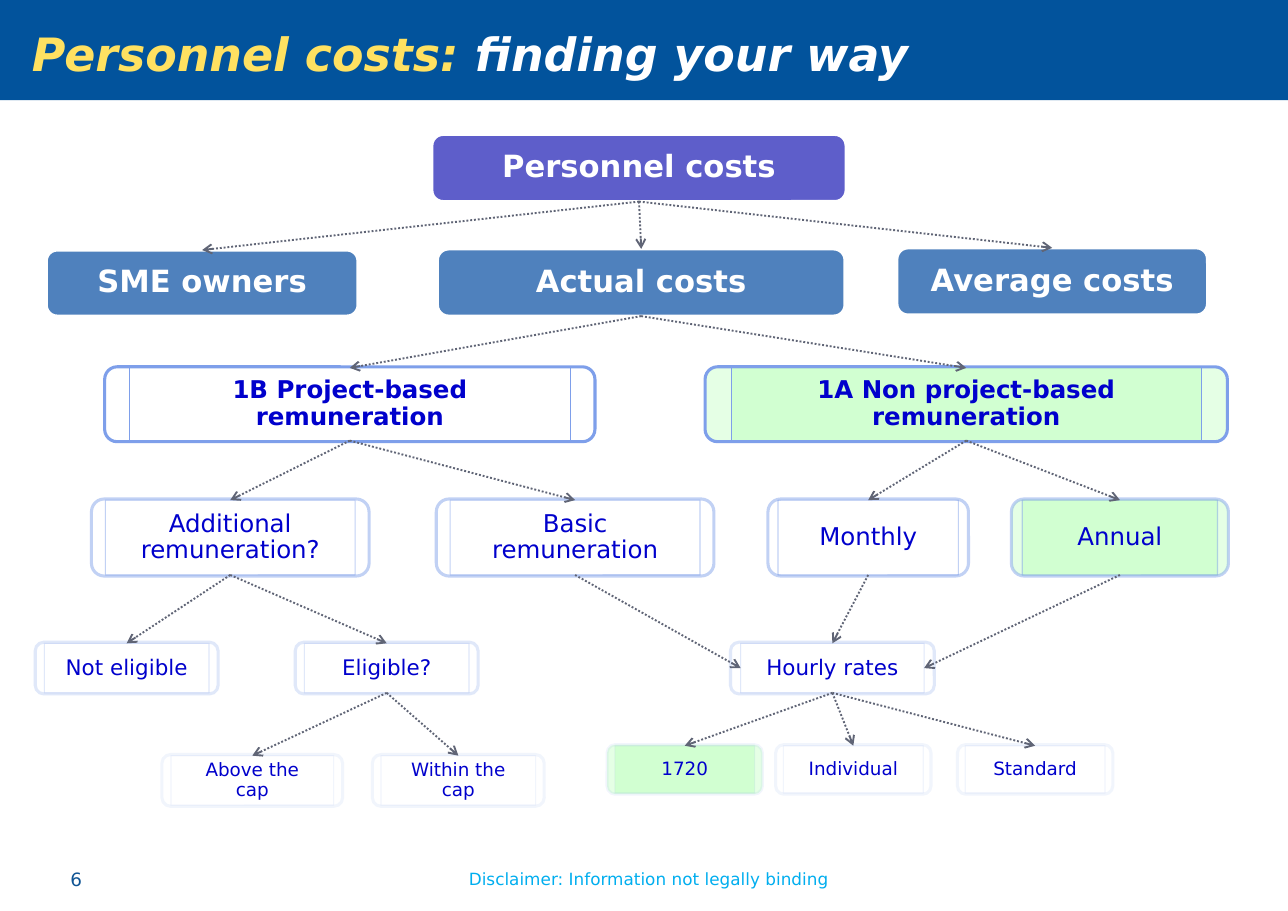
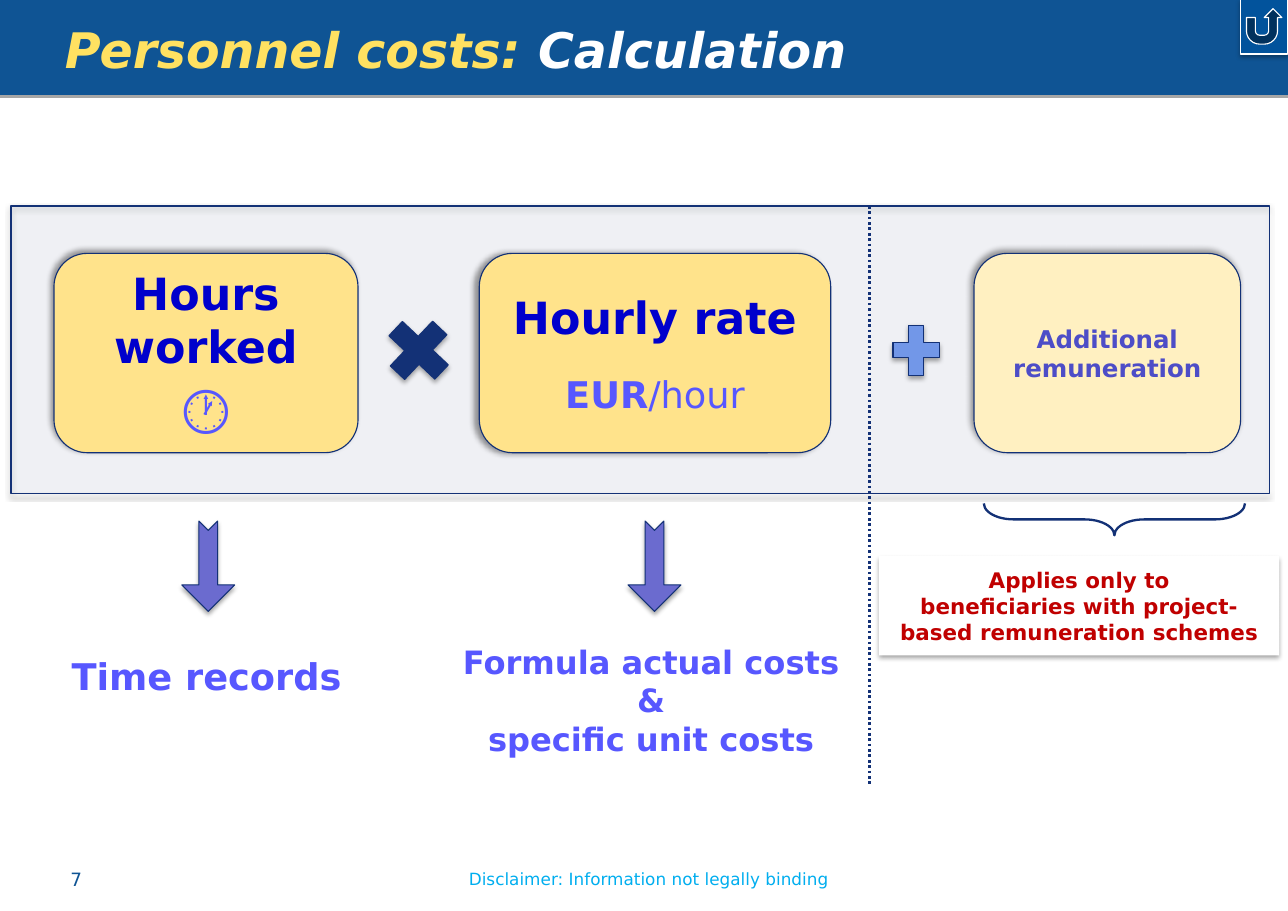
from dataclasses import dataclass

from lxml.etree import SubElement
from pptx import Presentation
from pptx.dml.color import RGBColor
from pptx.enum.dml import MSO_LINE
from pptx.enum.shapes import MSO_CONNECTOR, MSO_SHAPE
from pptx.enum.text import MSO_ANCHOR, PP_ALIGN
from pptx.oxml.ns import qn
from pptx.util import Inches, Pt


@dataclass(frozen=True)
class Theme:
    font: str = "DejaVu Sans"
    white: str = "FFFFFF"
    band: str = "0F5494"
    deep_band: str = "02539C"
    title_yellow: str = "FFE161"
    disclaimer: str = "00AEEF"
    root: str = "5E5ECA"
    branch: str = "4F81BD"
    outline: str = "7E9FEA"
    chosen: str = "99FF99"
    arrow: str = "606576"
    node_text: str = "0000CC"
    navy: str = "133176"
    card: str = "FFE38B"
    pale_card: str = "FFF0C1"
    violet: str = "5757FF"
    soft_violet: str = "4D4DC7"
    down_arrow: str = "6B6BCF"
    plus: str = "7297E8"
    warning: str = "C00000"
    number_size: int = 12
    disclaimer_size: int = 11
    branch_size: int = 20
    card_size: int = 29
    clock_size: int = 37
    large_size: int = 24
    formula_size: int = 21
    extra_size: int = 16
    note_size: int = 14


theme = Theme()
# Shadows: opacity in percent, blur and distance in points, direction in degrees
BAND_SHADOW = (35, 0, 1.8, 90)
DROP_SHADOW = (35, 3.1, 1.8, 90)
TOP_LEFT_SHADOW = (40, 4, 3, 225)
LEFT_SHADOW = (40, 4, 3, 180)


def add_box(slide, kind, place, lines=(), fill=None, line=None, width=0.75,
            fill_alpha=100, line_alpha=100, shadow=None, align=PP_ALIGN.CENTER,
            anchor=MSO_ANCHOR.MIDDLE, margins=(0.1, 0.05), spacing=1.0, gap=0):
    """Add a shape, or a text box if kind is None.

    Each of lines is a list of runs: (text, size, colour, bold, italic).
    """
    place = [Inches(length) for length in place]
    if kind is None:
        shape = slide.shapes.add_textbox(*place)
    else:
        shape = slide.shapes.add_shape(kind, *place)
    shape.shadow.inherit = False
    properties = shape.element.spPr
    for part, colour, alpha in ((shape.fill, fill, fill_alpha),
                                (shape.line.fill, line, line_alpha)):
        if colour is None:
            part.background()
            continue
        part.solid()
        part.fore_color.rgb = RGBColor.from_string(colour)
        if alpha < 100:
            owner = properties if part is shape.fill else properties.find(qn("a:ln"))
            colour_element = owner.find(qn("a:solidFill"))[0]
            SubElement(colour_element, qn("a:alpha"), val=str(alpha * 1000))
    if line:
        shape.line.width = Pt(width)
    if shadow:
        opacity, blur, distance, direction = shadow
        outer = SubElement(
            properties.find(qn("a:effectLst")), qn("a:outerShdw"),
            blurRad=str(Pt(blur)), dist=str(Pt(distance)),
            dir=str(direction * 60000), algn="ctr", rotWithShape="0")
        black = SubElement(outer, qn("a:srgbClr"), val="000000")
        SubElement(black, qn("a:alpha"), val=str(opacity * 1000))

    frame = shape.text_frame
    frame.word_wrap = True
    frame.vertical_anchor = anchor
    frame.margin_left = frame.margin_right = Inches(margins[0])
    frame.margin_top = frame.margin_bottom = Inches(margins[1])
    for index, runs in enumerate(lines):
        paragraph = frame.add_paragraph() if index else frame.paragraphs[0]
        paragraph.alignment = align
        paragraph.line_spacing = spacing
        if index and gap:
            paragraph.space_before = Pt(gap)
        for text, size, colour, bold, italic in runs:
            run = paragraph.add_run()
            run.text = text
            run.font.name = theme.font
            run.font.size = Pt(size)
            run.font.bold = bold
            run.font.italic = italic
            run.font.color.rgb = RGBColor.from_string(colour)
    return shape


def add_dotted_line(slide, start, end, colour, width):
    connector = slide.shapes.add_connector(
        MSO_CONNECTOR.STRAIGHT, *[Inches(length) for length in (*start, *end)])
    connector.line.color.rgb = RGBColor.from_string(colour)
    connector.line.width = Pt(width)
    connector.line.dash_style = MSO_LINE.ROUND_DOT
    SubElement(connector.element.spPr, qn("a:effectLst"))
    return connector


presentation = Presentation()
presentation.slide_width = Inches(11.69)
presentation.slide_height = Inches(8.27)

# Band, title, number and disclaimer of each slide
headers = [
    dict(number=6, topic="finding your way", size=30, place=(0.18, -0.08, 11.42, 1.13),
         anchor=MSO_ANCHOR.MIDDLE, height=0.91,
         band=dict(fill=theme.deep_band)),
    dict(number=7, topic="Calculation", size=32, place=(0.48, 0.12, 10.51, 1.1),
         anchor=MSO_ANCHOR.TOP, height=0.83,
         band=dict(fill=theme.band, line=theme.band, width=5, shadow=BAND_SHADOW)),
]
slides = []
for header in headers:
    slide = presentation.slides.add_slide(presentation.slide_layouts[6])
    slides.append(slide)
    add_box(slide, MSO_SHAPE.RECTANGLE, (0, 0, 11.69, header["height"]), **header["band"])
    add_box(slide, None, header["place"],
            [[("Personnel costs: ", header["size"], theme.title_yellow, True, True),
              (header["topic"], header["size"], theme.white, True, True)]],
            align=PP_ALIGN.LEFT, anchor=header["anchor"], margins=(0.11, 0.06))
    add_box(slide, None, (0.54, 7.83, 0.82, 0.3),
            [[(str(header["number"]), theme.number_size, theme.band, False, False)]],
            align=PP_ALIGN.LEFT, anchor=MSO_ANCHOR.TOP)
    add_box(slide, None, (4.04, 7.84, 3.7, 0.29),
            [[("Disclaimer: Information not legally binding",
               theme.disclaimer_size, theme.disclaimer, False, False)]],
            anchor=MSO_ANCHOR.TOP)
tree_slide, calculation_slide = slides

# Decision tree: filled boxes on top, outlined boxes that fade row by row
nodes = {}
node_text = dict(margins=(0.17, 0.08), spacing=0.9)
filled_nodes = [
    ("Personnel costs", (3.92, 1.22, 3.76, 0.61), theme.root),
    ("SME owners", (0.42, 2.27, 2.83, 0.6), theme.branch),
    ("Actual costs", (3.97, 2.26, 3.7, 0.61), theme.branch),
    ("Average costs", (8.14, 2.25, 2.82, 0.61), theme.branch),
]
for label, place, colour in filled_nodes:
    nodes[label] = add_box(
        tree_slide, MSO_SHAPE.ROUNDED_RECTANGLE, place,
        [[(label, theme.branch_size, theme.white, True, False)]],
        fill=colour, line=theme.white, width=2, **node_text)

# Rows: top, height, text size, bold, outline opacity, (label, left, width)
outlined_rows = [
    (3.33, 0.68, 16, True, 100, [("1B Project-based remuneration", 0.95, 4.45),
                                 ("1A Non project-based remuneration", 6.4, 4.74)]),
    (4.53, 0.7, 16, False, 48, [("Additional remuneration?", 0.83, 2.52),
                                ("Basic remuneration", 3.96, 2.52),
                                ("Monthly", 6.97, 1.82), ("Annual", 9.18, 1.97)]),
    (5.83, 0.47, 14, False, 24, [("Not eligible", 0.32, 1.66), ("Eligible?", 2.68, 1.66),
                                 ("Hourly rates", 6.63, 1.85)]),
    (6.85, 0.47, 12, False, 10, [("Above the cap", 1.47, 1.64),
                                 ("Within the cap", 3.38, 1.56)]),
    (6.76, 0.45, 12, False, 10, [("1720", 5.51, 1.41), ("Individual", 7.04, 1.41),
                                 ("Standard", 8.69, 1.41)]),
]
chosen_nodes = {"1A Non project-based remuneration", "Annual", "1720"}
for top, height, size, bold, opacity, row in outlined_rows:
    for label, left, width in row:
        tint = dict(fill=theme.chosen, fill_alpha=25) if label in chosen_nodes else {}
        outline = dict(line=theme.outline, line_alpha=opacity)
        add_box(tree_slide, MSO_SHAPE.ROUNDED_RECTANGLE, (left, top, width, height),
                width=2, **outline, **(tint or dict(fill=theme.white)))
        nodes[label] = add_box(
            tree_slide, MSO_SHAPE.RECTANGLE,
            (left + width * 0.05, top + 0.01, width * 0.9, height - 0.02),
            [[(label, size, theme.node_text, bold, False)]],
            **outline, **tint, **node_text)

TOP, LEFT, BOTTOM, RIGHT = range(4)
branches = {
    "Personnel costs": ["SME owners", "Actual costs", "Average costs"],
    "Actual costs": ["1B Project-based remuneration", "1A Non project-based remuneration"],
    "1B Project-based remuneration": ["Additional remuneration?", "Basic remuneration"],
    "1A Non project-based remuneration": ["Monthly", "Annual"],
    "Additional remuneration?": ["Not eligible", "Eligible?"],
    "Eligible?": ["Above the cap", "Within the cap"],
    "Basic remuneration": ["Hourly rates"],
    "Monthly": ["Hourly rates"],
    "Annual": ["Hourly rates"],
    "Hourly rates": ["1720", "Individual", "Standard"],
}
side_entries = {"Basic remuneration": LEFT, "Annual": RIGHT}
for parent, children in branches.items():
    for child in children:
        connector = add_dotted_line(tree_slide, (0, 0), (0, 0), theme.arrow, 1.25)
        connector.begin_connect(nodes[parent], BOTTOM)
        connector.end_connect(nodes[child], side_entries.get(parent, TOP))
        SubElement(connector.element.spPr.find(qn("a:ln")), qn("a:tailEnd"), type="arrow")

# Calculation: hours x rate + additional remuneration
navy_line = dict(line=theme.navy)
add_box(calculation_slide, MSO_SHAPE.RECTANGLE, (0.1, 1.87, 11.42, 2.61),
        fill=theme.navy, fill_alpha=5, shadow=DROP_SHADOW, **navy_line)
cards = [
    (0.49, 2.76, theme.card, TOP_LEFT_SHADOW, 0,
     [[("Hours worked", theme.card_size, theme.node_text, True, False)],
      [("🕐", theme.clock_size, theme.violet, True, False)]]),
    (4.35, 3.19, theme.card, LEFT_SHADOW, 18,
     [[("Hourly rate", theme.card_size, theme.node_text, True, False)],
      [("EUR", theme.large_size, theme.violet, True, False),
       ("/hour", theme.large_size, theme.violet, False, False)]]),
    (8.84, 2.42, theme.pale_card, TOP_LEFT_SHADOW, 0,
     [[("Additional remuneration", theme.extra_size, theme.soft_violet, True, False)]]),
]
for left, width, colour, shadow, gap, lines in cards:
    add_box(calculation_slide, MSO_SHAPE.ROUNDED_RECTANGLE, (left, 2.3, width, 1.81), lines,
            fill=colour, shadow=shadow, gap=gap, **navy_line)
operators = [((3.42, 2.79, 0.76, 0.78), theme.navy, 313.4),
             ((8.03, 2.87, 0.57, 0.62), theme.plus, 0)]
for place, colour, rotation in operators:
    operator = add_box(calculation_slide, MSO_SHAPE.MATH_PLUS, place,
                       fill=colour, shadow=DROP_SHADOW, **navy_line)
    operator.rotation = rotation
add_dotted_line(calculation_slide, (7.89, 1.87), (7.89, 7.13), theme.navy, 1.75)

# What each factor is based on
sources = [
    (1.48, (0.42, 5.89, 2.91, 0.51), theme.large_size, ["Time records"]),
    (5.53, (3.86, 5.78, 4.1, 1.16), theme.formula_size,
     ["Formula actual costs", "&", "specific unit costs"]),
]
for arrow_left, place, size, texts in sources:
    arrow = add_box(calculation_slide, MSO_SHAPE.NOTCHED_RIGHT_ARROW,
                    (arrow_left, 4.9, 0.82, 0.48), fill=theme.down_arrow,
                    shadow=DROP_SHADOW, **navy_line)
    arrow.rotation = 90
    arrow.adjustments[0] = 0.355
    add_box(calculation_slide, None, place,
            [[(text, size, theme.violet, True, False)] for text in texts],
            anchor=MSO_ANCHOR.TOP)

brace = add_box(calculation_slide, MSO_SHAPE.LEFT_BRACE, (9.97, 3.53, 0.29, 2.37),
                width=1.5, **navy_line)
brace.rotation = 270
brace.adjustments[0] = 0.934
add_box(calculation_slide, MSO_SHAPE.RECTANGLE, (7.98, 5.05, 3.63, 0.9),
        [[(text, theme.note_size, theme.warning, True, False)] for text in (
            "Applies only to", "beneficiaries with project-based remuneration schemes")],
        fill=theme.white, shadow=DROP_SHADOW)
add_box(calculation_slide, MSO_SHAPE.ACTION_BUTTON_RETURN, (11.26, -0.01, 0.43, 0.5),
        fill=theme.deep_band, line=theme.white, shadow=DROP_SHADOW)

presentation.save("out.pptx")
